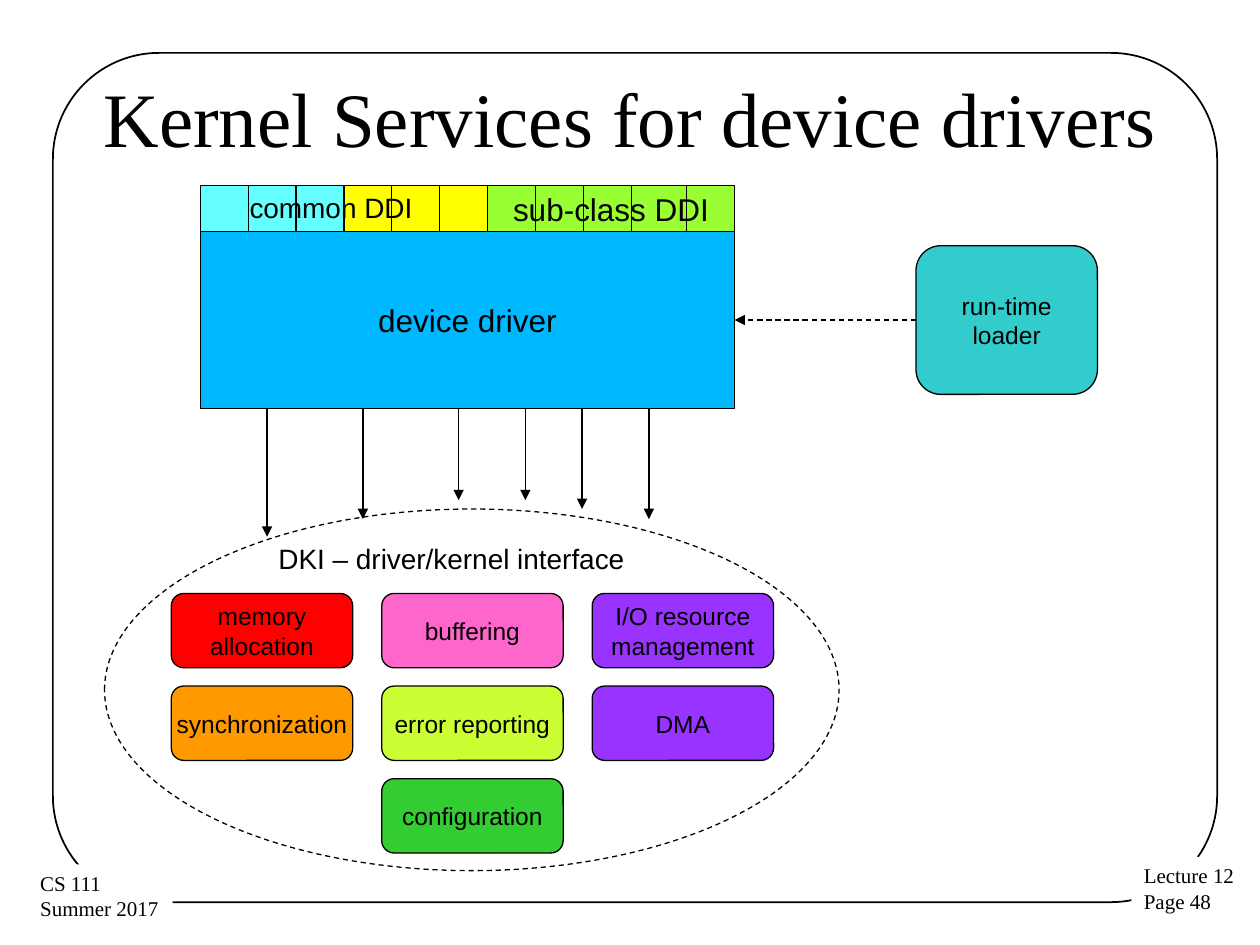
from lxml import etree
from pptx import Presentation
from pptx.dml.color import RGBColor
from pptx.enum.dml import MSO_LINE
from pptx.enum.shapes import MSO_CONNECTOR, MSO_SHAPE
from pptx.enum.text import MSO_ANCHOR, PP_ALIGN
from pptx.oxml.ns import qn
from pptx.util import Inches, Pt

RECT, ROUND, OVAL = MSO_SHAPE.RECTANGLE, MSO_SHAPE.ROUNDED_RECTANGLE, MSO_SHAPE.OVAL
STRAIGHT, DASH = MSO_CONNECTOR.STRAIGHT, MSO_LINE.DASH
LEFT, CENTER = PP_ALIGN.LEFT, PP_ALIGN.CENTER
TOP, MIDDLE = MSO_ANCHOR.TOP, MSO_ANCHOR.MIDDLE

BLACK = RGBColor(0x00, 0x00, 0x00)
WHITE = RGBColor(0xFF, 0xFF, 0xFF)
CYAN = RGBColor(0x66, 0xFF, 0xFF)
YELLOW = RGBColor(0xFF, 0xFF, 0x00)
LIME = RGBColor(0x99, 0xFF, 0x33)
BLUE = RGBColor(0x00, 0xB8, 0xFF)
TEAL = RGBColor(0x33, 0xCC, 0xCC)
RED = RGBColor(0xFF, 0x00, 0x00)
PINK = RGBColor(0xFF, 0x66, 0xCC)
PURPLE = RGBColor(0x99, 0x33, 0xFF)
ORANGE = RGBColor(0xFF, 0x99, 0x00)
CHARTREUSE = RGBColor(0xCC, 0xFF, 0x33)
GREEN = RGBColor(0x33, 0xCC, 0x33)

SERIF, SANS = "Times New Roman", "Arial"


def write(shape, text, size=14, font=SANS, align=CENTER, anchor=MIDDLE,
          margins=(0.09, 0.04), wrap=False):
    """Fill a shape with text, one paragraph for each line."""
    frame = shape.text_frame
    frame.word_wrap = wrap
    frame.vertical_anchor = anchor
    frame.margin_left = frame.margin_right = Inches(margins[0])
    frame.margin_top = frame.margin_bottom = Inches(margins[1])
    frame.text = text
    for paragraph in frame.paragraphs:
        paragraph.alignment = align
        paragraph.font.size = Pt(size)
        paragraph.font.name = font
        paragraph.font.color.rgb = BLACK


def add_box(slide, box, kind=RECT, fill=None, width=0.75, dash=None, corner=None):
    """Place a preset shape; without a width it has no outline."""
    shape = slide.shapes.add_shape(kind, *map(Inches, box))
    shape.shadow.inherit = False
    if fill is None:
        shape.fill.background()
    else:
        shape.fill.solid()
        shape.fill.fore_color.rgb = fill
    if width:
        shape.line.color.rgb = BLACK
        shape.line.width = Pt(width)
        shape.line.dash_style = dash
    else:
        shape.line.fill.background()
    if corner:
        shape.adjustments[0] = corner
    return shape


def add_label(slide, box, text, **text_format):
    label = slide.shapes.add_textbox(*map(Inches, box))
    write(label, text, wrap=True, **text_format)


def add_line(slide, start, end, dash=None, arrow=False):
    line = slide.shapes.add_connector(STRAIGHT, *map(Inches, start + end))
    line.line.color.rgb = BLACK
    line.line.width = Pt(0.75)
    line.line.dash_style = dash
    properties = line.line._get_or_add_ln()
    if arrow:
        etree.SubElement(properties, qn("a:tailEnd"), type="triangle")
    etree.SubElement(properties.getparent(), qn("a:effectLst"))


def draw_frame(slide, box):
    """Rounded page border, interrupted by the two footers."""
    left, top, width, height = box
    bottom, right = top + height, left + width
    add_box(slide, box, ROUND, width=1, corner=0.125)
    footers = (
        ((right - 0.68, bottom - 0.36, 0.93, 0.51), "Lecture 12\nPage 48"),
        ((left - 0.2, bottom - 0.3, 1.15, 0.51), "CS 111\nSummer 2017"),
    )
    for place, text in footers:
        footer = add_box(slide, place, fill=WHITE, width=None)
        write(footer, text, size=12, font=SERIF, align=LEFT, anchor=TOP,
              margins=(0.1, 0.05))


def draw_driver(slide, box):
    """Driver block under a row of interface entry points."""
    left, top, width, height = box
    row, entry = 0.37, 0.38
    group = 3 * entry
    add_box(slide, (left + group, top, group, row), fill=YELLOW)
    add_box(slide, (left, top, group, row), fill=CYAN)
    sub_class = add_box(slide, (left + 2 * group, top, width - 2 * group, row), fill=LIME)
    write(sub_class, "sub-class DDI", size=18)
    driver = add_box(slide, (left, top + row, width, height - row), fill=BLUE)
    write(driver, "device driver", size=18)
    dividers = [left + entry * n for n in range(1, 10) if n != 6]
    for x in dividers + [left + width - entry]:
        add_line(slide, (x, top), (x, top + row))
    add_label(slide, (left + 0.3, top, 1.59, row), "common DDI", size=16,
              align=LEFT, anchor=TOP)


def draw_loader(slide, box, driver_edge):
    left, top, width, height = box
    loader = add_box(slide, box, ROUND, TEAL, corner=0.167)
    write(loader, "run-time\nloader")
    middle = top + height / 2
    add_line(slide, (left, middle), (driver_edge, middle), dash=DASH, arrow=True)


def draw_kernel_interface(slide, box):
    """Dashed ellipse holding a grid of kernel services."""
    left, top, width, height = box
    column, row = 1.67, 0.735
    services = (
        (0, 0, "memory\nallocation", RED),
        (1, 0, "buffering", PINK),
        (2, 0, "I/O resource\nmanagement", PURPLE),
        (0, 1, "synchronization", ORANGE),
        (1, 1, "error reporting", CHARTREUSE),
        (2, 1, "DMA", PURPLE),
        (1, 2, "configuration", GREEN),
    )
    for across, down, text, color in services:
        place = (left + 0.53 + across * column, top + 0.67 + down * row, 1.44, 0.59)
        service = add_box(slide, place, ROUND, color, corner=0.167)
        write(service, text)
    add_box(slide, box, OVAL, dash=DASH)
    add_label(slide, (left + 1.29, top + 0.22, 3.26, 0.36),
              "DKI – driver/kernel interface", size=16, align=LEFT, anchor=TOP)


def draw_calls(slide, top):
    """Arrows from the driver down to the kernel interface."""
    calls = ((2.12, 4.26), (2.88, 4.12), (3.64, 3.97),
             (4.17, 3.97), (4.62, 4.04), (5.15, 4.12))
    for x, end in calls:
        add_line(slide, (x, top), (x, end), arrow=True)


def main():
    deck = Presentation()
    deck.slide_width, deck.slide_height = Inches(10), Inches(7.5)
    slide = deck.slides.add_slide(deck.slide_layouts[6])
    left, top, width, height = driver_box = (1.59, 1.47, 4.24, 1.77)

    draw_frame(slide, (0.42, 0.42, 9.24, 6.74))
    add_label(slide, (0.5, 0.3, 9, 1.25), "Kernel Services for device drivers",
              size=44, font=SERIF, margins=(0.1, 0.05))
    draw_driver(slide, driver_box)
    draw_loader(slide, (7.27, 1.95, 1.44, 1.18), left + width)
    draw_kernel_interface(slide, (0.83, 4.04, 5.83, 2.87))
    draw_calls(slide, top + height)
    deck.save("out.pptx")


if __name__ == "__main__":
    main()
